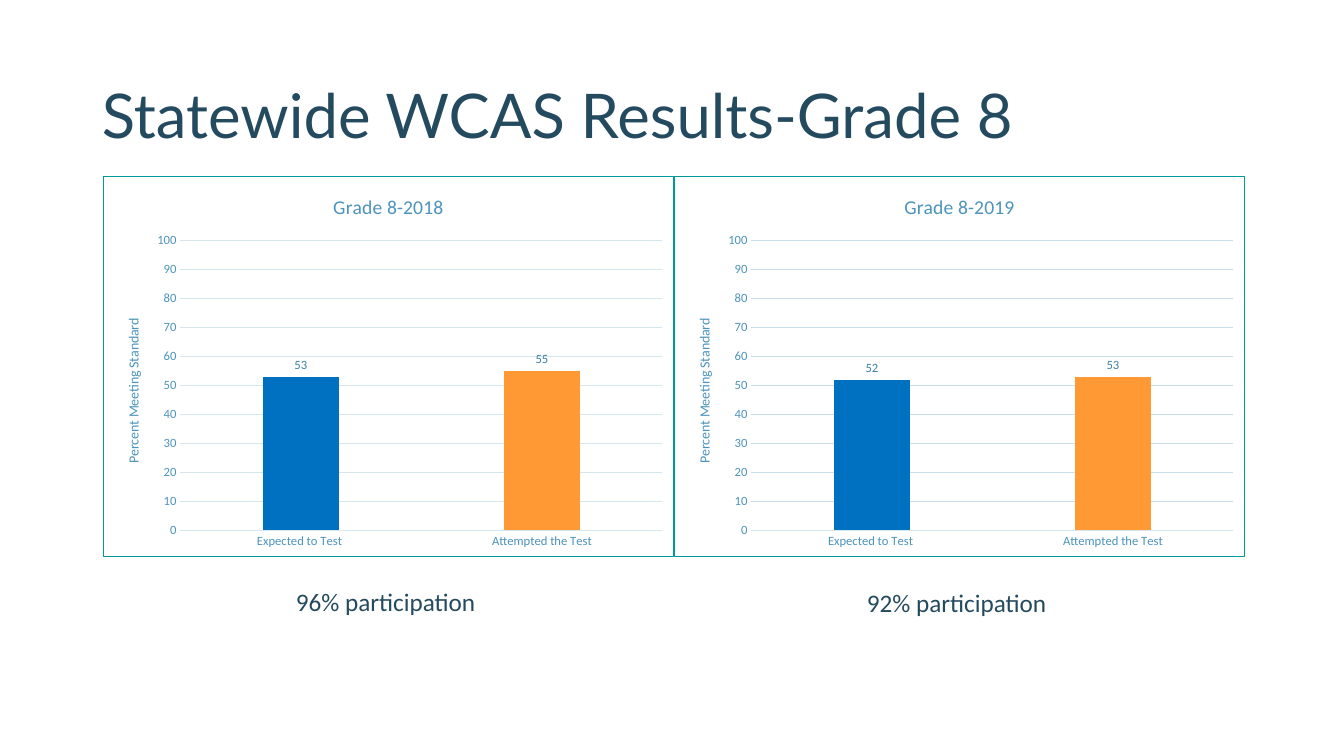
from lxml.etree import SubElement
from pptx import Presentation
from pptx.chart.data import CategoryChartData
from pptx.dml.color import RGBColor
from pptx.enum.chart import XL_CHART_TYPE, XL_LABEL_POSITION, XL_TICK_MARK
from pptx.enum.text import MSO_ANCHOR
from pptx.oxml import parse_xml
from pptx.oxml.ns import nsdecls, qn
from pptx.util import Pt

EMU_PER_PX = 914400 / 100.8
COLORS = {
    "ink": "244A5F",
    "axis": "4C94BB",
    "label": "3E80A4",
    "axis_line": "D6E6EF",
    "pale_grid": "C8DEEA",
    "border": "009999",
    "expected": "0070C0",
    "attempted": "FF9933",
}
CHART_WIDTH, CHART_HEIGHT = 571, 381
PLOT_LAYOUT = {
    "x": 77 / CHART_WIDTH,
    "y": 64 / CHART_HEIGHT,
    "w": 483 / CHART_WIDTH,
    "h": 291 / CHART_HEIGHT,
}
YEARS = [
    ("Grade 8-2018", (53, 55), "axis_line", 0.75, "96% participation", 581),
    ("Grade 8-2019", (52, 53), "pale_grid", 0.25, "92% participation", 582),
]


def px(length):
    return round(length * EMU_PER_PX)


def color(name):
    return RGBColor.from_string(COLORS[name])


def style_font(font, name, size, color_name):
    font.name = name
    font.size = Pt(size)
    font.bold = False
    font.color.rgb = color(color_name)


def add_text(slide, box, text, font_name, size, anchor=MSO_ANCHOR.TOP, spacing=1.0):
    shape = slide.shapes.add_textbox(*map(px, box))
    frame = shape.text_frame
    frame.word_wrap = True
    frame.vertical_anchor = anchor
    paragraph = frame.paragraphs[0]
    paragraph.text = text
    paragraph.line_spacing = spacing
    style_font(paragraph.font, font_name, size, "ink")


def set_title(title, text, size):
    frame = title.text_frame
    frame.text = text
    style_font(frame.paragraphs[0].font, "Calibri", size, "axis")


def set_plot_layout(chart):
    plot_area = chart.plots[0]._element.getparent()
    for layout in plot_area.findall(qn("c:layout")):
        plot_area.remove(layout)
    layout = parse_xml(f"<c:layout {nsdecls('c')}/>")
    manual = SubElement(layout, qn("c:manualLayout"))
    SubElement(manual, qn("c:layoutTarget")).set("val", "inner")
    for side in "xy":
        SubElement(manual, qn(f"c:{side}Mode")).set("val", "edge")
    for key, value in PLOT_LAYOUT.items():
        SubElement(manual, qn(f"c:{key}")).set("val", f"{value:.4f}")
    plot_area.insert(0, layout)


def set_border(chart):
    border = parse_xml(
        f"<c:spPr {nsdecls('c', 'a')}><a:noFill/><a:ln w=\"{Pt(0.75)}\"><a:solidFill>"
        f"<a:srgbClr val=\"{COLORS['border']}\"/></a:solidFill></a:ln></c:spPr>"
    )
    chart._chartSpace.find(qn("c:chart")).addnext(border)


def style_axes(chart, grid_color, grid_width):
    category_axis, value_axis = chart.category_axis, chart.value_axis
    for axis in (category_axis, value_axis):
        axis.major_tick_mark = XL_TICK_MARK.NONE
        axis.minor_tick_mark = XL_TICK_MARK.NONE
        style_font(axis.tick_labels.font, "Calibri", 9, "axis")
    category_axis.format.line.color.rgb = color("axis_line")
    category_axis.format.line.width = Pt(0.75)
    value_axis.minimum_scale = 0
    value_axis.maximum_scale = 100
    value_axis.major_unit = 10
    value_axis.format.line.fill.background()
    grid = value_axis.major_gridlines.format.line
    grid.color.rgb = color(grid_color)
    grid.width = Pt(grid_width)
    set_title(value_axis.axis_title, "Percent Meeting Standard", 10)


def style_bars(plot):
    plot.gap_width = 219
    plot.overlap = -27
    plot.vary_by_categories = False
    empty_series, score_series = plot.series
    empty_element = empty_series._element
    empty_element.remove(empty_element.find(qn("c:val")))
    labels = score_series.data_labels
    labels.show_value = True
    labels.position = XL_LABEL_POSITION.OUTSIDE_END
    style_font(labels.font, "Calibri", 9, "label")
    for index, name in enumerate(("expected", "attempted")):
        fill = score_series.points[index].format.fill
        fill.solid()
        fill.fore_color.rgb = color(name)


def add_year_chart(slide, box, title, scores, grid_color, grid_width):
    data = CategoryChartData()
    data.categories = ["Expected to Test ", "Attempted the Test"]
    data.add_series("Series 1", ())
    data.add_series("Series 2", scores)
    frame = slide.shapes.add_chart(XL_CHART_TYPE.COLUMN_CLUSTERED, *map(px, box), data)
    chart = frame.chart
    style_font(chart.font, "Calibri", 10, "ink")
    chart.has_legend = False
    set_title(chart.chart_title, title, 14)
    style_axes(chart, grid_color, grid_width)
    style_bars(chart.plots[0])
    set_plot_layout(chart)
    set_border(chart)


def add_results_slide(presentation):
    slide = presentation.slides.add_slide(presentation.slide_layouts[6])
    add_text(slide, (92, 46, 1159, 146), "Statewide WCAS Results-Grade 8",
             "Lato", 44, MSO_ANCHOR.MIDDLE, 0.9)
    for index, (title, scores, grid_color, grid_width, note, note_top) in enumerate(YEARS):
        left = 103 + index * CHART_WIDTH
        box = (left, 176, CHART_WIDTH, CHART_HEIGHT)
        add_year_chart(slide, box, title, scores, grid_color, grid_width)
        add_text(slide, (left + 183, note_top, 205, 40), note, "Calibri", 18)


def main():
    presentation = Presentation()
    presentation.slide_width = px(1344)
    presentation.slide_height = px(756)
    add_results_slide(presentation)
    presentation.save("out.pptx")


if __name__ == "__main__":
    main()
